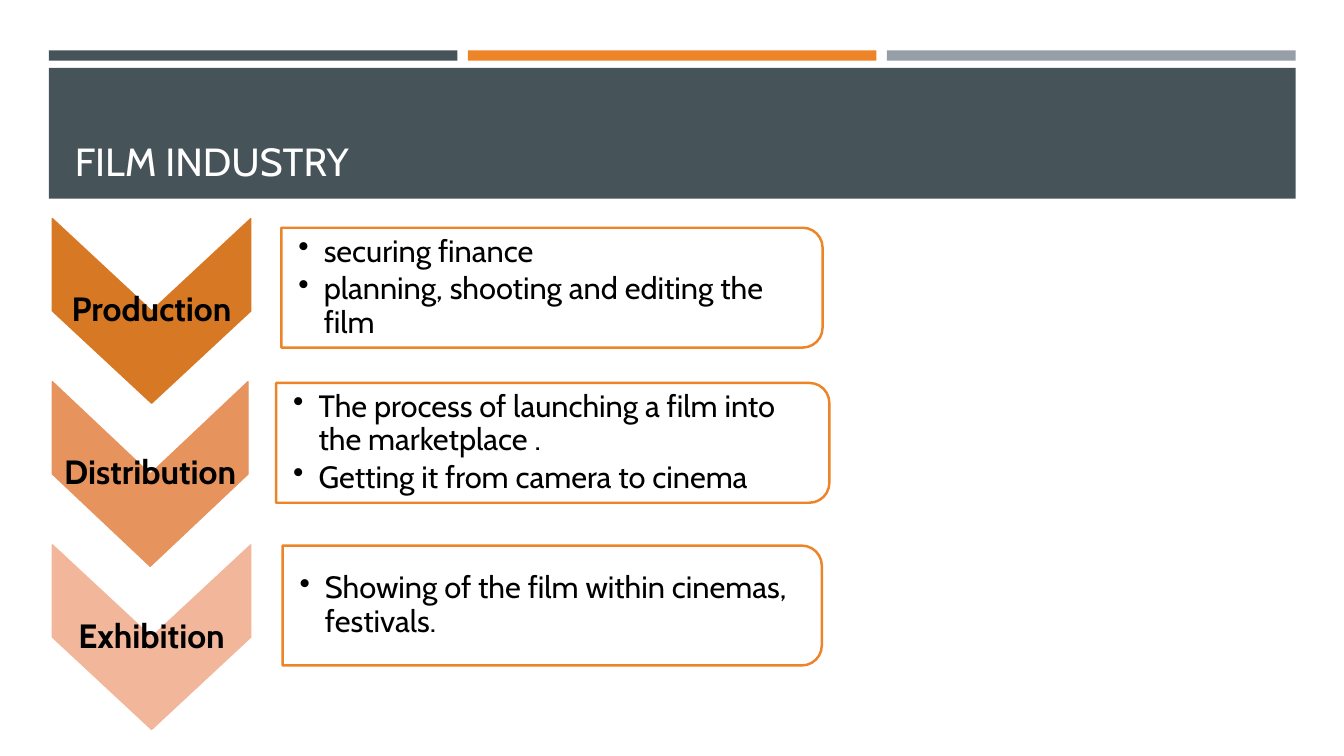
from pptx import Presentation, util as u
from pptx.dml.color import RGBColor
from pptx.enum import shapes, text
from pptx.oxml.ns import qn
from pptx.util import Cm

FONT = "Cabin"
COLORS = {"slate": "465359", "orange": "ED8428", "gray": "969FA7",
          "white": "FFFFFF", "black": "000000"}
STAGE_LEFT, STAGE_TOP, STAGE_PITCH, STAGE_HEIGHT = 1.32, 5.51, 4.11, 4.65
PANEL_HEIGHT = 3.02
# name, chevron colour, chevron width, panel (left, offset from stage top, width), points
STAGES = [
    ("Production", "D77824", 5, (7.09, 0.23, 13.64),
     ["securing finance", "planning, shooting and editing the film"]),
    ("Distribution", "E7935D", 4.93, (6.96, 0.03, 13.94),
     ["The process of launching a film into the marketplace .",
      "Getting it from camera to cinema"]),
    ("Exhibition", "F2B69A", 5, (7.12, 0.02, 13.59),
     ["Showing of the film within cinemas, festivals."]),
]


def rgb(value):
    return RGBColor.from_string(COLORS.get(value, value))


def set_all(obj, formats):
    for name, value in formats.items():
        setattr(obj, name, value)


def add_preset(slide, kind, box, fill, line=None, weight=1, turned=False):
    """Place a preset shape so that it covers box, turned a quarter clockwise if asked."""
    left, top, width, height = box
    if turned:
        left, top = left + (width - height) / 2, top + (height - width) / 2
        width, height = height, width
    sp = slide.shapes.add_shape(kind, Cm(left), Cm(top), Cm(width), Cm(height))
    sp.shadow.inherit = False
    sp.rotation = 90 if turned else 0
    sp.fill.solid()
    sp.fill.fore_color.rgb = rgb(fill)
    if line:
        sp.line.color.rgb = rgb(line)
        sp.line.width = u.Pt(weight)
    else:
        sp.line.fill.background()
    return sp


def add_text(slide, box, lines, size, bold=False, bulleted=False):
    tf = slide.shapes.add_textbox(*map(Cm, box)).text_frame
    set_all(tf, {"word_wrap": True, "vertical_anchor": text.MSO_ANCHOR.MIDDLE,
                 "margin_left": Cm(0.43 if bulleted else 0.05), "margin_right": Cm(0.05),
                 "margin_top": Cm(0.05), "margin_bottom": Cm(0.05)})
    for i, line in enumerate(lines):
        p = tf.paragraphs[0] if i == 0 else tf.add_paragraph()
        set_all(p, {"line_spacing": 0.9, "space_after": u.Pt(size * 0.15),
                    "alignment": text.PP_ALIGN.LEFT if bulleted else text.PP_ALIGN.CENTER})
        r = p.add_run()
        r.text = line
        set_all(r.font, {"name": FONT, "size": u.Pt(size), "bold": bold})
        r.font.color.rgb = rgb("black")
        if bulleted:
            pPr = p._p.get_or_add_pPr()
            pPr.set("marL", str(Cm(0.64)))
            pPr.set("indent", str(-Cm(0.64)))
            bullet = pPr.makeelement(qn("a:buChar"), {"char": "•"})
            pPr.append(bullet)


def add_header(slide, box, title):
    left, top, width, height = box
    gap = 0.26
    bar = (width - 2 * gap) / 3
    for i, color in enumerate(("slate", "orange", "gray")):
        add_preset(slide, shapes.MSO_SHAPE.RECTANGLE,
                   (left + i * (bar + gap), top, bar, 0.26), color)
    add_preset(slide, shapes.MSO_SHAPE.RECTANGLE,
               (left, top + 0.44, width, height - 0.44), "slate")

    sp = slide.shapes.title
    slide.shapes._spTree.append(sp._element)  # in front of the band
    set_all(sp, {"left": Cm(left + 0.4), "top": Cm(top + 0.69),
                 "width": Cm(width - 0.79), "height": Cm(2.82)})
    sp.text_frame.text = title
    sp.text_frame.vertical_anchor = text.MSO_ANCHOR.BOTTOM
    p = sp.text_frame.paragraphs[0]
    p.alignment = text.PP_ALIGN.LEFT
    set_all(p.runs[0].font, {"name": FONT, "size": u.Pt(28)})
    p.runs[0].font.color.rgb = rgb("white")


def add_stage(slide, box, name, color, panel, points):
    """Draw a labelled chevron in box and its panel of points to the right."""
    add_preset(slide, shapes.MSO_SHAPE.CHEVRON, box, color, color, turned=True)
    add_text(slide, box, [name], 24, bold=True)

    left, offset, width = panel
    top = box[1] + offset
    add_preset(slide, shapes.MSO_SHAPE.ROUND_2_SAME_RECTANGLE,
               (left, top, width, PANEL_HEIGHT), "white", "orange", 1.75, turned=True)
    add_text(slide, (left, top + 0.15, width - 0.15, PANEL_HEIGHT - 0.3),
             points, 22, bulleted=True)


def main():
    prs = Presentation()
    prs.slide_width, prs.slide_height = Cm(33.87), Cm(19.05)
    slide = prs.slides.add_slide(prs.slide_layouts[5])
    add_header(slide, (1.23, 1.27, 31.42, 3.74), "FILM INDUSTRY")
    for i, (name, color, width, panel, points) in enumerate(STAGES):
        box = (STAGE_LEFT, STAGE_TOP + i * STAGE_PITCH, width, STAGE_HEIGHT)
        add_stage(slide, box, name, color, panel, points)
    prs.save("out.pptx")


if __name__ == "__main__":
    main()
